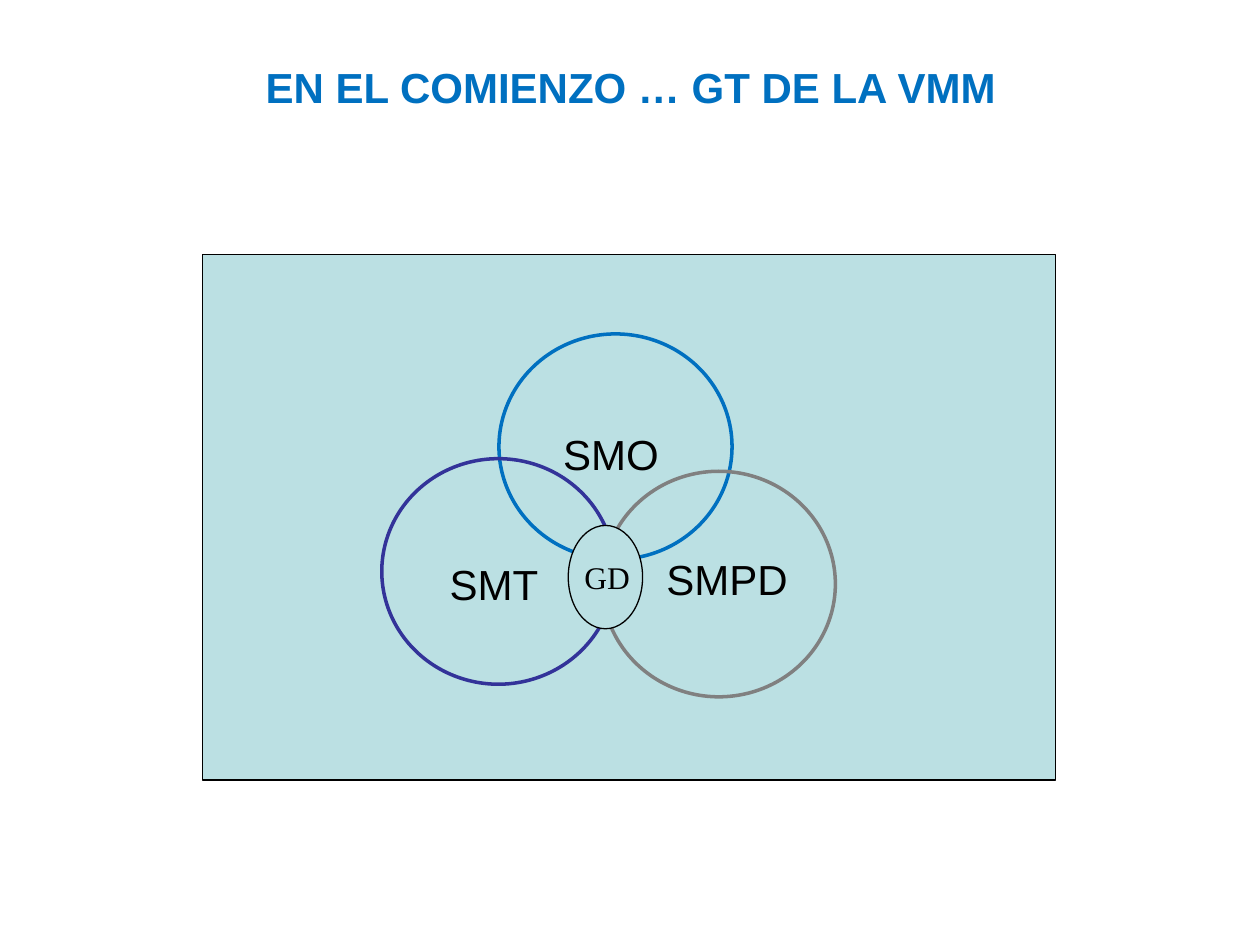
import pptx
import pptx.dml.color
import pptx.enum.shapes
import pptx.enum.text
import pptx.util

Inches = pptx.util.Inches
SHAPES = pptx.enum.shapes.MSO_SHAPE
PANEL, BLACK, BLUE, PURPLE, GRAY = "BBE0E3", "000000", "0070C0", "333399", "808080"


def color(value):
    """Turn a hex string into an RGB colour."""
    return pptx.dml.color.RGBColor.from_string(value)


class Diagram:
    """Holds the lettering style and the slide being drawn."""

    def __init__(self, slide, font="Arial", size=24):
        """Keep the slide and the default font."""
        self.slide, self.font, self.size = slide, font, size

    def outline(self, kind, place, line, width, fill=None):
        """Add an outlined shape, hollow unless a fill is given."""
        shape = self.slide.shapes.add_shape(kind, *map(Inches, place))
        shape.shadow.inherit = False
        if fill:
            shape.fill.solid()
            shape.fill.fore_color.rgb = color(fill)
        else:
            shape.fill.background()
        shape.line.color.rgb = color(line)
        shape.line.width = pptx.util.Pt(width)

    def label(self, text, place, ink=BLACK, bold=False, font=None, size=None):
        """Add a one-line label that fits its text."""
        frame = self.slide.shapes.add_textbox(*map(Inches, place)).text_frame
        frame.word_wrap = False
        frame.auto_size = pptx.enum.text.MSO_AUTO_SIZE.SHAPE_TO_FIT_TEXT
        run = frame.paragraphs[0].add_run()
        run.text = text
        run.font.name = font or self.font
        run.font.size = pptx.util.Pt(size or self.size)
        run.font.bold = bold
        run.font.color.rgb = color(ink)


def main():
    """Build the slide of three overlapping groups and save it."""
    deck = pptx.Presentation()
    deck.slide_width, deck.slide_height = Inches(10), Inches(7.5)
    diagram = Diagram(deck.slides.add_slide(deck.slide_layouts[6]))

    diagram.outline(SHAPES.RECTANGLE, (1.61, 2.02, 6.77, 4.17), BLACK, 0.75, PANEL)
    groups = [
        ("SMO", BLUE, (3.96, 2.65), (4.37, 3.35, 1.02, 0.52)),
        ("SMT", PURPLE, (3.03, 3.64), (3.47, 4.38, 0.97, 0.52)),
        ("SMPD", GRAY, (4.78, 3.74), (5.19, 4.34, 1.22, 0.52)),
    ]
    for name, ring, corner, name_place in groups:
        diagram.outline(SHAPES.OVAL, (*corner, 1.85, 1.79), ring, 2)
        diagram.label(name, name_place)

    diagram.label("EN EL COMIENZO … GT DE LA VMM", (2.01, 0.44, 6.23, 0.5), BLUE, bold=True)
    diagram.outline(SHAPES.OVAL, (4.51, 4.17, 0.59, 0.82), BLACK, 0.75, PANEL)
    diagram.label("GD", (4.54, 4.38, 0.57, 0.4), font="Times New Roman", size=18)
    deck.save("out.pptx")


if __name__ == "__main__":
    main()
